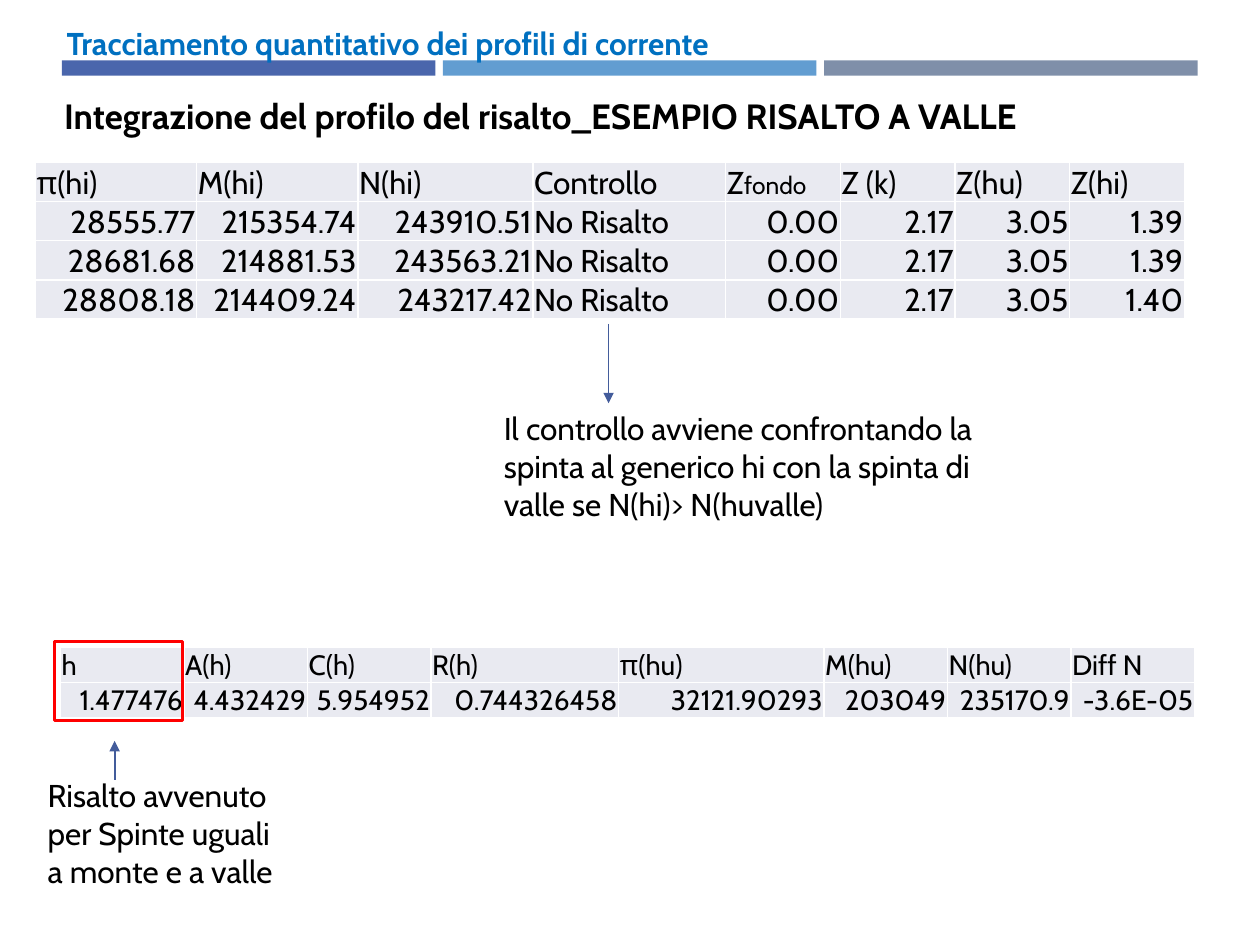
from pptx import Presentation
from pptx.dml.color import RGBColor as RGB
from pptx.enum.shapes import MSO_CONNECTOR as LINE, MSO_SHAPE as SHAPE
from pptx.enum.text import MSO_ANCHOR as ANCHOR, PP_ALIGN as ALIGN
from pptx.oxml.ns import qn
from pptx.util import Inches, Pt
from lxml.etree import SubElement as Sub

FONT = "Cabin"
BLACK = RGB(0x00, 0x00, 0x00)
BLUE = RGB(0x00, 0x70, 0xC0)
RED = RGB(0xFF, 0x00, 0x00)
PALE = RGB(0xE9, 0xEA, 0xF1)
ARROW = RGB(0x43, 0x5C, 0x9B)
BARS = [RGB(0x4A, 0x66, 0xAC), RGB(0x62, 0x9D, 0xD1), RGB(0x7F, 0x8F, 0xA9)]

deck = Presentation()
deck.slide_width, deck.slide_height = Inches(10), Inches(7.5)
slide = deck.slides.add_slide(deck.slide_layouts[6])
shapes = slide.shapes

# The grid has 100 columns and 75 rows
COL = deck.slide_width / 100
ROW = deck.slide_height / 75


def style(run, size, color=BLACK, bold=False):
    font = run.font
    font.name, font.size, font.bold = FONT, Pt(size), bold
    font.color.rgb = color


def grid(x, y, widths, height, size, data):
    """Add a table with left-aligned heads and words, right-aligned numbers."""
    frame = shapes.add_table(len(data), len(widths), int(x * COL), int(y * ROW),
                             int(sum(widths) * COL), int(len(data) * height * ROW))
    table = frame.table
    table.first_row = table.horz_banding = False
    for col, width in zip(table.columns, widths):
        col.width = int(width * COL)
    for r, line in enumerate(data):
        table.rows[r].height = int(height * ROW)
        for c, text in enumerate(line):
            cell = table.cell(r, c)
            cell.fill.solid()
            cell.fill.fore_color.rgb = PALE
            cell.vertical_anchor = ANCHOR.BOTTOM
            cell.margin_left = cell.margin_right = cell.margin_top = Inches(0.01)
            cell.margin_bottom = 0
            cell.text_frame.text = text
            para = cell.text_frame.paragraphs[0]
            number = r > 0 and not text[0].isalpha()
            para.alignment = ALIGN.RIGHT if number else ALIGN.LEFT
            style(para.runs[0], size)
    return table


# Header bars
for i, color in enumerate(BARS):
    bar = shapes.add_shape(SHAPE.RECTANGLE, int((4.9 + 30.25 * i) * COL), int(4.8 * ROW),
                           int(29.65 * COL), int(1.2 * ROW))
    bar.shadow.inherit = False
    bar.fill.solid()
    bar.fill.fore_color.rgb = color
    bar.line.fill.background()

# Titles and notes
texts = [
    (4.3, 1.4, 60.6, 4, 18, BLUE, True,
     "Tracciamento quantitativo dei profili di corrente"),
    (4.1, 7, 95.9, 4.4, 20, BLACK, True,
     "Integrazione del profilo del risalto_ESEMPIO RISALTO A VALLE"),
    (39, 32, 40.9, 10.1, 18, BLACK, False,
     "Il controllo avviene confrontando la spinta al generico hi con la spinta di "
     "valle se N(hi)> N(huvalle)"),
    (2.8, 61.1, 21.3, 10.1, 18, BLACK, False,
     "Risalto avvenuto per Spinte uguali a monte e a valle"),
]
for x, y, w, h, size, color, bold, text in texts:
    box = shapes.add_textbox(int(x * COL), int(y * ROW), int(w * COL), int(h * ROW))
    box.text_frame.word_wrap = True
    box.text_frame.text = text
    style(box.text_frame.paragraphs[0].runs[0], size, color, bold)

# Tables
flow = grid(2.8, 12.9, [12.8, 12.8, 13.9, 15.3] + [9.1] * 4, 3.05, 18, [
    ["π(hi)", "M(hi)", "N(hi)", "Controllo", "Z", "Z (k)", "Z(hu)", "Z(hi)"],
    ["28555.77", "215354.74", "243910.51", "No Risalto", "0.00", "2.17", "3.05", "1.39"],
    ["28681.68", "214881.53", "243563.21", "No Risalto", "0.00", "2.17", "3.05", "1.39"],
    ["28808.18", "214409.24", "243217.42", "No Risalto", "0.00", "2.17", "3.05", "1.40"],
])
bed = flow.cell(0, 4).text_frame.paragraphs[0].add_run()
bed.text = "fondo"
style(bed, 14)

grid(4.8, 51.4, [9.8] * 3 + [14.9, 16.3] + [9.8] * 3, 2.73, 16, [
    ["h", "A(h)", "C(h)", "R(h)", "π(hu)", "M(hu)", "N(hu)", "Diff N"],
    ["1.477476", "4.432429", "5.954952", "0.744326458", "32121.90293", "203049",
     "235170.9", "-3.6E-05"],
])

# Frame around the resulting depth
mark = shapes.add_shape(SHAPE.RECTANGLE, int(4.3 * COL), int(50.9 * ROW),
                        int(10.2 * COL), int(6.3 * ROW))
mark.shadow.inherit = False
mark.fill.background()
mark.line.color.rgb = RED
mark.line.width = Pt(1.75)

# Arrows between tables and notes
for x, start, end in [(48.3, 25.7, 32), (9.1, 61.9, 58.8)]:
    arrow = shapes.add_connector(LINE.STRAIGHT, int(x * COL), int(start * ROW),
                                 int(x * COL), int(end * ROW))
    arrow.line.color.rgb = ARROW
    arrow.line.width = Pt(1)
    Sub(arrow.line._get_or_add_ln(), qn("a:tailEnd"), type="triangle")
    Sub(arrow._element.spPr, qn("a:effectLst"))

deck.save("out.pptx")
